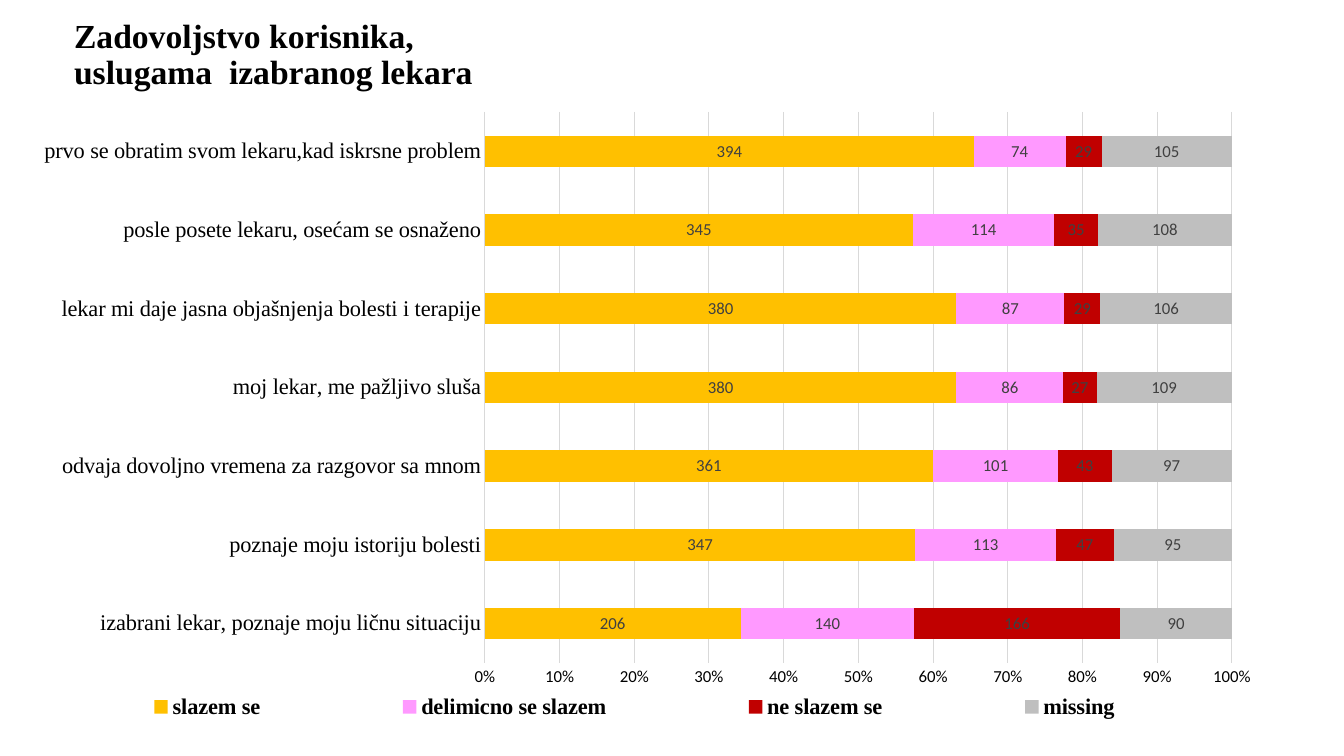
from lxml import etree
from pptx import Presentation
from pptx.chart.data import CategoryChartData
from pptx.dml.color import RGBColor
from pptx.enum.chart import XL_CHART_TYPE, XL_LEGEND_POSITION as LEGEND, XL_TICK_MARK as TICK
from pptx.enum.text import MSO_ANCHOR, MSO_AUTO_SIZE
from pptx.oxml.ns import qn
from pptx.util import Pt

PX = 12192000 / 1344
SERIF, SANS = "Times New Roman", "Calibri"
CHART = (19, 99, 1257, 642)
PLOT = (485, 112, 747, 551)
LEGEND_BOX = (19, 689, 1231, 36)

CATEGORIES = [
    "izabrani lekar, poznaje moju ličnu situaciju",
    "poznaje moju istoriju bolesti",
    "odvaja dovoljno vremena za razgovor sa mnom",
    "moj lekar, me pažljivo sluša",
    "lekar mi daje jasna objašnjenja bolesti i terapije",
    "posle posete lekaru, osećam se osnaženo",
    "prvo se obratim svom lekaru,kad iskrsne problem",
]
SERIES = [
    ("slazem se", "FFC000", (206, 347, 361, 380, 380, 345, 394)),
    ("delimicno se slazem", "FF99FF", (140, 113, 101, 86, 87, 114, 74)),
    ("ne slazem se", "C00000", (166, 47, 43, 27, 29, 35, 29)),
    ("missing", "BFBFBF", (90, 95, 97, 109, 106, 108, 105)),
]


def set_font(font, name, size, color="000000", bold=False):
    font.name, font.size, font.bold = name, Pt(size), bold
    font.color.rgb = RGBColor.from_string(color)


def set_layout(parent, box, inner=False):
    """Place a chart part at a slide box given in px."""
    layout = parent.find(qn("c:layout"))
    if layout is None:
        layout = etree.Element(qn("c:layout"))
        parent.insert(1 if parent.tag == qn("c:legend") else 0, layout)
    manual = etree.SubElement(layout, qn("c:manualLayout"))
    left, top, width, height = CHART
    values = [("xMode", "edge"), ("yMode", "edge"),
              ("x", round((box[0] - left) / width, 4)),
              ("y", round((box[1] - top) / height, 4)),
              ("w", round(box[2] / width, 4)),
              ("h", round(box[3] / height, 4))]
    if inner:
        values.insert(0, ("layoutTarget", "inner"))
    for tag, value in values:
        etree.SubElement(manual, qn("c:" + tag)).set("val", str(value))


prs = Presentation()
prs.slide_width, prs.slide_height = round(1344 * PX), round(756 * PX)
s = prs.slides.add_slide(prs.slide_layouts[5])

# Title
title = s.shapes.title
title.left, title.top, title.width, title.height = [round(v * PX) for v in (64, 20, 437, 71)]
tf = title.text_frame
tf.word_wrap = True
tf.auto_size = MSO_AUTO_SIZE.NONE
tf.vertical_anchor = MSO_ANCHOR.MIDDLE
p = tf.paragraphs[0]
p.alignment = 1
p.line_spacing = 0.9
r = p.add_run()
r.text = "Zadovoljstvo korisnika, uslugama  izabranog lekara"
set_font(r.font, SERIF, 24, bold=True)

# Chart
data = CategoryChartData()
data.categories = CATEGORIES
for name, color, values in SERIES:
    data.add_series(name, values)
chart = s.shapes.add_chart(XL_CHART_TYPE.BAR_STACKED_100,
                           *[round(v * PX) for v in CHART], data).chart
chart.has_title = False
set_font(chart.font, SANS, 10)
plot = chart.plots[0]
plot.gap_width, plot.overlap = 150, 100
plot.vary_by_categories = False
for series, (name, color, values) in zip(plot.series, SERIES):
    series.format.fill.solid()
    series.format.fill.fore_color.rgb = RGBColor.from_string(color)
    labels = series.data_labels
    labels.show_value = True
    set_font(labels.font, SANS, 12, "404040")

# Axes
cat_axis, val_axis = chart.category_axis, chart.value_axis
for axis, font_name, size in ((cat_axis, SERIF, 16), (val_axis, SANS, 12)):
    axis.major_tick_mark = axis.minor_tick_mark = TICK.NONE
    set_font(axis.tick_labels.font, font_name, size)
val_axis.minimum_scale, val_axis.maximum_scale, val_axis.major_unit = 0, 1, 0.1
val_axis.tick_labels.number_format = "0%"
val_axis.tick_labels.number_format_is_linked = False
val_axis.has_major_gridlines = True
val_axis.format.line.fill.background()
for line in (cat_axis.format.line, val_axis.major_gridlines.format.line):
    line.width = Pt(0.75)
    line.color.rgb = RGBColor.from_string("D9D9D9")

# Legend
chart.has_legend = True
legend = chart.legend
legend.position = LEGEND.BOTTOM
legend.include_in_layout = False
set_font(legend.font, SERIF, 16, bold=True)

plot_area = chart.element.find(".//" + qn("c:plotArea"))
set_layout(plot_area, PLOT, inner=True)
set_layout(chart.element.find(".//" + qn("c:legend")), LEGEND_BOX)

prs.save("out.pptx")
